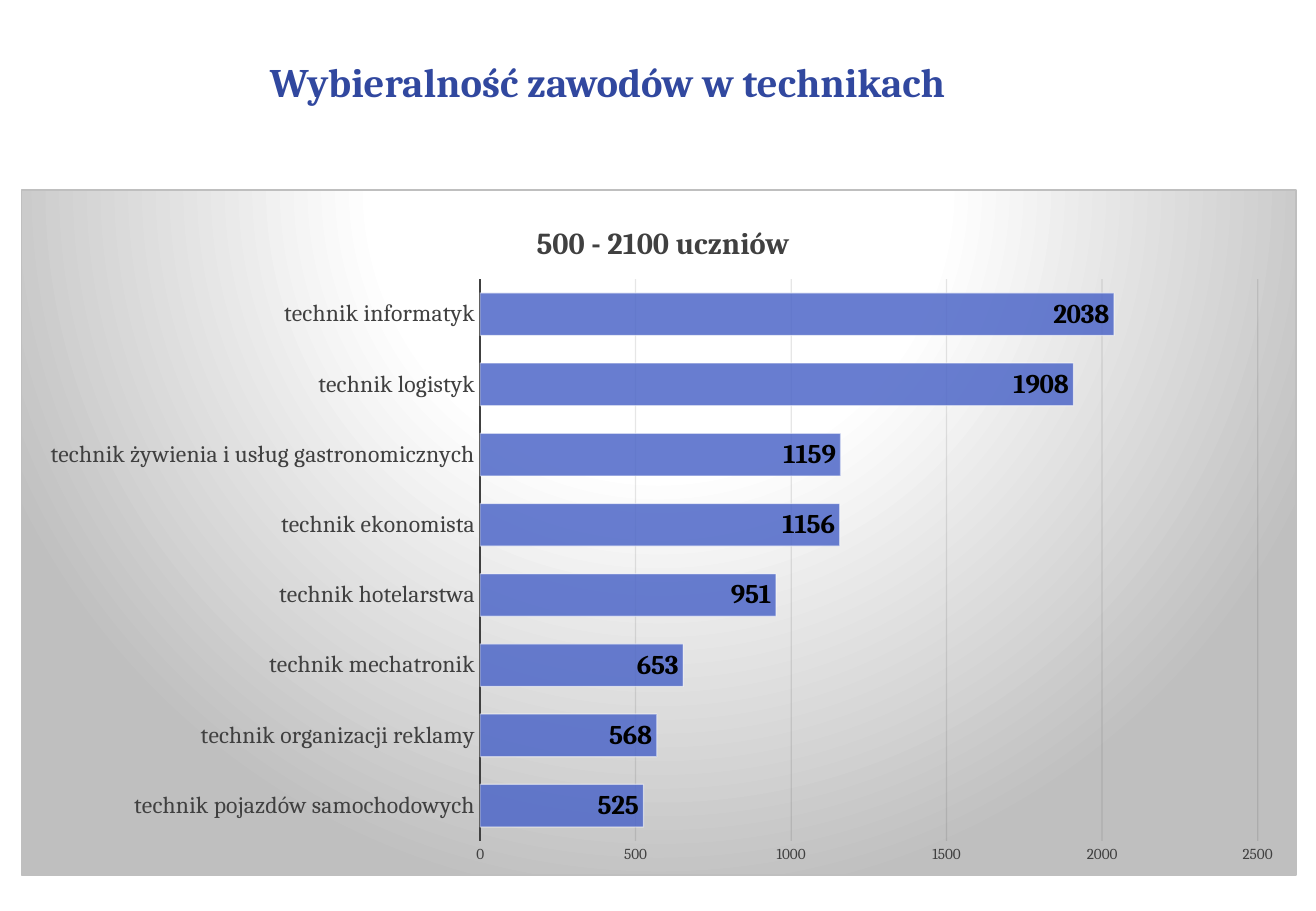
from dataclasses import dataclass

from pptx import Presentation
from pptx.chart.chart import Chart
from pptx.chart.data import CategoryChartData
from pptx.dml.color import RGBColor
from pptx.dml.fill import FillFormat
from pptx.enum.chart import XL_CHART_TYPE, XL_LABEL_POSITION, XL_TICK_MARK
from pptx.enum.text import MSO_ANCHOR, PP_ALIGN
from pptx.oxml import parse_xml
from pptx.oxml.ns import nsdecls, qn
from pptx.slide import Slide
from pptx.text.text import Font
from pptx.util import Inches, Pt

FONT_NAME = "Cambria"
TITLE_BLUE = RGBColor(0x31, 0x48, 0x9F)
BAR_BLUE = RGBColor(0x4E, 0x67, 0xC8)
DARK_GRAY = RGBColor(0x40, 0x40, 0x40)
GRID_BLACK = RGBColor(0x0D, 0x0D, 0x0D)
BORDER_GRAY = RGBColor(0xBF, 0xBF, 0xBF)
BLACK = RGBColor(0, 0, 0)
WHITE = RGBColor(0xFF, 0xFF, 0xFF)


@dataclass(frozen=True)
class Profession:
    name: str
    students: int


PROFESSIONS = [
    Profession("technik pojazdów samochodowych", 525),
    Profession("technik organizacji reklamy", 568),
    Profession("technik mechatronik", 653),
    Profession("technik hotelarstwa", 951),
    Profession("technik ekonomista", 1156),
    Profession("technik żywienia i usług gastronomicznych", 1159),
    Profession("technik logistyk", 1908),
    Profession("technik informatyk", 2038),
]


def set_font(font: Font, size: float, color: RGBColor, bold: bool = False) -> None:
    font.name = FONT_NAME
    font.size = Pt(size)
    font.bold = bold
    font.color.rgb = color


def set_fill(fill: FillFormat, color: RGBColor, opacity: int) -> None:
    fill.solid()
    fill.fore_color.rgb = color
    color_element = fill._xPr.find(qn("a:solidFill"))[0]
    color_element.append(
        parse_xml(f'<a:alpha {nsdecls("a")} val="{opacity * 1000}"/>')
    )


def layout_xml(target: str, **factors: float) -> str:
    modes = "".join(f'<c:{axis}Mode val="edge"/>' for axis in "xy")
    values = "".join(f'<c:{key} val="{value}"/>' for key, value in factors.items())
    return (
        f'<c:layout {nsdecls("c")}><c:manualLayout>{target}{modes}{values}'
        "</c:manualLayout></c:layout>"
    )


def add_title(slide: Slide) -> None:
    title = slide.shapes.title
    title.left, title.top = Inches(2.12), Inches(0.16)
    title.width, title.height = Inches(8.55), Inches(1.02)
    title.text_frame.vertical_anchor = MSO_ANCHOR.MIDDLE
    paragraph = title.text_frame.paragraphs[0]
    paragraph.text = "Wybieralność zawodów w technikach"
    paragraph.alignment = PP_ALIGN.LEFT
    set_font(paragraph.font, 24, TITLE_BLUE, True)


def add_chart(slide: Slide) -> Chart:
    data = CategoryChartData()
    data.categories = [profession.name for profession in PROFESSIONS]
    data.add_series("Series 1", [profession.students for profession in PROFESSIONS])
    chart = slide.shapes.add_chart(
        XL_CHART_TYPE.BAR_CLUSTERED,
        Inches(0.17), Inches(1.56), Inches(10.5), Inches(5.65), data,
    ).chart
    chart.has_legend = False
    set_font(chart.font, 10, BLACK)
    return chart


def format_background(chart: Chart) -> None:
    stops = "".join(
        f'<a:gs pos="{position * 1000}"><a:srgbClr val="{color}"/></a:gs>'
        for position, color in ((0, WHITE), (39, WHITE), (100, BORDER_GRAY))
    )
    chart._chartSpace.find(qn("c:chart")).addnext(parse_xml(
        f'<c:spPr {nsdecls("c", "a")}><a:gradFill><a:gsLst>{stops}</a:gsLst>'
        '<a:path path="circle">'
        '<a:fillToRect l="50000" t="-80000" r="50000" b="180000"/>'
        f'</a:path></a:gradFill><a:ln w="{Pt(0.75)}"><a:solidFill>'
        f'<a:srgbClr val="{BORDER_GRAY}"/></a:solidFill></a:ln></c:spPr>'
    ))


def format_chart_title(chart: Chart) -> None:
    paragraph = chart.chart_title.text_frame.paragraphs[0]
    paragraph.text = "500 - 2100 uczniów"
    set_font(paragraph.font, 18, DARK_GRAY, True)
    title = chart.chart_title._element
    for layout in title.findall(qn("c:layout")):
        title.remove(layout)
    title.find(qn("c:tx")).addnext(parse_xml(layout_xml("", x=0.4, y=0.04)))
    chart.chart_title.include_in_layout = False


def format_axes(chart: Chart) -> None:
    for axis, size in ((chart.category_axis, 14), (chart.value_axis, 9)):
        axis.major_tick_mark = XL_TICK_MARK.NONE
        axis.minor_tick_mark = XL_TICK_MARK.NONE
        set_font(axis.tick_labels.font, size, DARK_GRAY)
    category_line = chart.category_axis.format.line
    category_line.color.rgb = DARK_GRAY
    category_line.width = Pt(1.5)
    value_axis = chart.value_axis
    value_axis.minimum_scale, value_axis.maximum_scale = 0, 2500
    value_axis.major_unit = 500
    value_axis.format.line.fill.background()
    value_axis.has_major_gridlines = True
    grid_line = value_axis.major_gridlines.format.line
    grid_line.width = Pt(0.75)
    set_fill(grid_line.fill, GRID_BLACK, 10)


def format_bars(chart: Chart) -> None:
    plot = chart.plots[0]
    plot.gap_width = 65
    plot.vary_by_categories = False
    series = plot.series[0]
    set_fill(series.format.fill, BAR_BLUE, 85)
    series.format.line.width = Pt(0.75)
    set_fill(series.format.line.fill, WHITE, 50)
    labels = series.data_labels
    labels.show_value = True
    labels.position = XL_LABEL_POSITION.INSIDE_END
    set_font(labels.font, 16, BLACK, True)
    plot_area = chart._chartSpace.find(qn("c:chart")).find(qn("c:plotArea"))
    for layout in plot_area.findall(qn("c:layout")):
        plot_area.remove(layout)
    plot_area.insert(0, parse_xml(layout_xml(
        '<c:layoutTarget val="inner"/>', x=0.36, y=0.13, w=0.61, h=0.82
    )))


def main() -> None:
    presentation = Presentation()
    presentation.slide_width = Inches(10.83)
    presentation.slide_height = Inches(7.5)
    slide = presentation.slides.add_slide(presentation.slide_layouts[5])
    add_title(slide)
    chart = add_chart(slide)
    format_background(chart)
    format_chart_title(chart)
    format_axes(chart)
    format_bars(chart)
    presentation.save("out.pptx")


if __name__ == "__main__":
    main()
